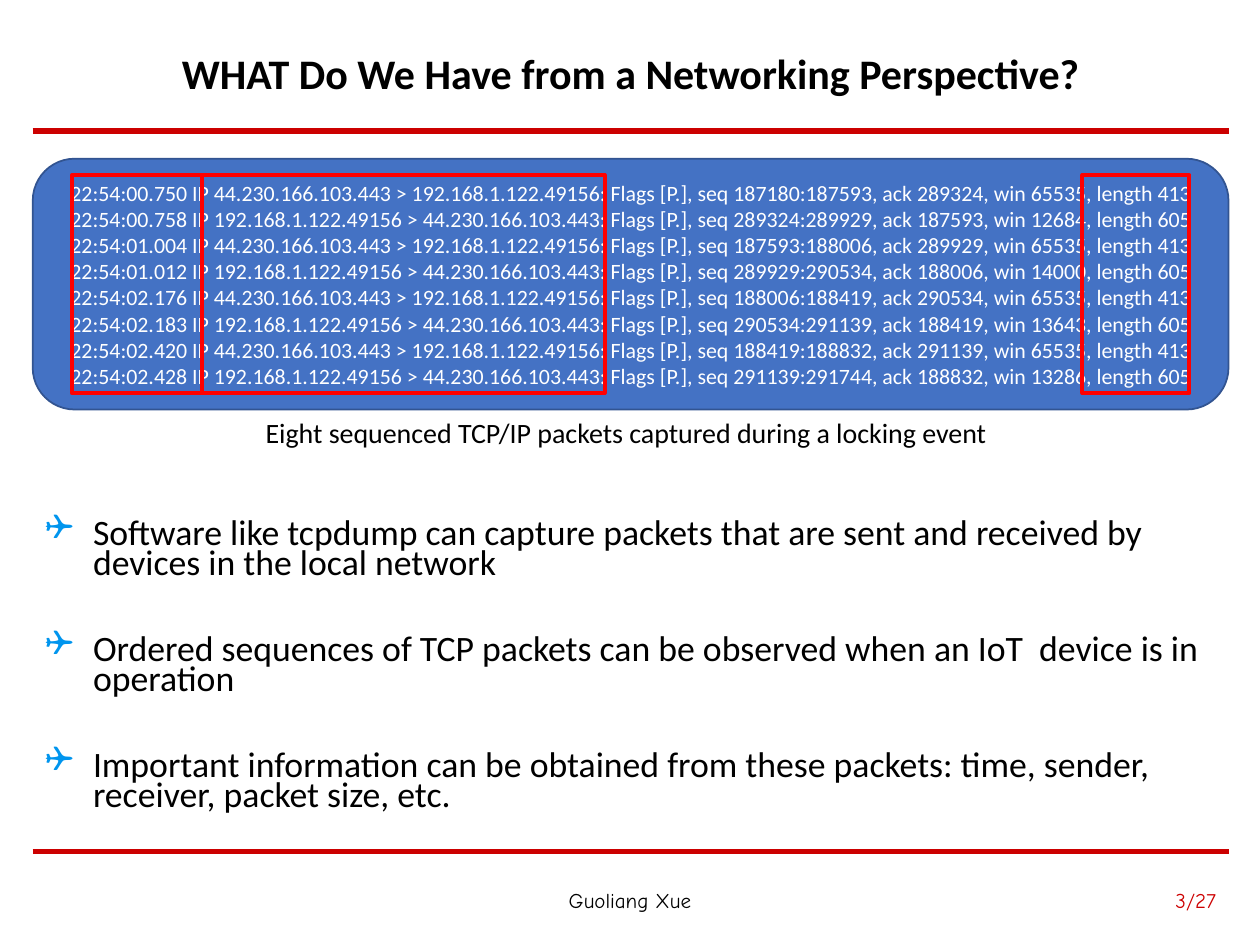
from pptx import Presentation
from pptx.dml.color import RGBColor
from pptx.enum.shapes import MSO_CONNECTOR, MSO_SHAPE
from pptx.enum.text import MSO_ANCHOR, PP_ALIGN
from pptx.oxml.ns import qn
from pptx.util import Inches, Pt
from lxml.etree import SubElement

COLORS = {
    "rule": "CC0000", "panel": "4472C4", "panel_line": "325491",
    "mark": "FF0000", "bullet": "0095EE", "page": "CD0000",
    "black": "000000", "white": "FFFFFF",
}
CLOUD, DEVICE = "44.230.166.103.443", "192.168.1.122.49156"
PACKETS = [
    ("00.750", 187180, 187593, 289324, 65535),
    ("00.758", 289324, 289929, 187593, 12684),
    ("01.004", 187593, 188006, 289929, 65535),
    ("01.012", 289929, 290534, 188006, 14000),
    ("02.176", 188006, 188419, 290534, 65535),
    ("02.183", 290534, 291139, 188419, 13643),
    ("02.420", 188419, 188832, 291139, 65535),
    ("02.428", 291139, 291744, 188832, 13286),
]
POINTS = [
    "Software like tcpdump can capture packets that are sent and received by devices in the local network",
    "Ordered sequences of TCP packets can be observed when an IoT  device is in operation",
    "Important information can be obtained from these packets: time, sender, receiver, packet size, etc.",
]


def rgb(name):
    return RGBColor.from_string(COLORS[name])


def add_bullet(p, indent):
    pPr = p._p.get_or_add_pPr()
    pPr.set("marL", str(indent))
    pPr.set("indent", str(-indent))
    clr = SubElement(pPr, qn("a:buClr"))
    SubElement(clr, qn("a:srgbClr"), val=COLORS["bullet"])
    SubElement(pPr, qn("a:buFont"), typeface="Wingdings")
    SubElement(pPr, qn("a:buChar"), char="❑")


def write(tf, lines, size, color="black", font="Calibri", bold=False,
          align=PP_ALIGN.LEFT, anchor=MSO_ANCHOR.TOP, wrap=True,
          spacing=None, gap=0, bullet=False):
    tf.word_wrap = wrap
    tf.vertical_anchor = anchor
    for i, line in enumerate(lines):
        p = tf.add_paragraph() if i else tf.paragraphs[0]
        if bullet:
            add_bullet(p, Inches(0.38))
        p.alignment = align
        if spacing:
            p.line_spacing = spacing
        if gap and i:
            p.space_before = Pt(gap)
        r = p.add_run()
        r.text = line
        r.font.size = Pt(size)
        r.font.name = font
        r.font.bold = bold
        r.font.color.rgb = rgb(color)


def add_text(s, box, lines, size, **fmt):
    sp = s.shapes.add_textbox(*map(Inches, box))
    write(sp.text_frame, lines, size, **fmt)


def add_box(s, kind, box, line, width, fill=None):
    sp = s.shapes.add_shape(kind, *map(Inches, box))
    sp.shadow.inherit = False
    if fill:
        sp.fill.solid()
        sp.fill.fore_color.rgb = rgb(fill)
    else:
        sp.fill.background()
    sp.line.color.rgb = rgb(line)
    sp.line.width = Pt(width)
    return sp


def add_rule(s, left, top, width):
    c = s.shapes.add_connector(MSO_CONNECTOR.STRAIGHT, Inches(left), Inches(top),
                               Inches(left + width), Inches(top))
    c.line.color.rgb = rgb("rule")
    c.line.width = Pt(3)
    SubElement(c._element.spPr, qn("a:effectLst"))


def packet_line(time, start, end, ack, win):
    length = end - start
    src, dst = (CLOUD, DEVICE) if length == 413 else (DEVICE, CLOUD)
    return (f"22:54:{time} IP {src} > {dst}: Flags [P.], "
            f"seq {start}:{end}, ack {ack}, win {win}, length {length}")


def add_header(s, left, top, width):
    add_text(s, (left, top, width, 0.65), ["WHAT Do We Have from a Networking Perspective?"],
             24, bold=True, align=PP_ALIGN.CENTER, anchor=MSO_ANCHOR.MIDDLE, spacing=0.9)
    add_rule(s, left, top + 0.76, width)


def add_capture(s, left, top, width, height):
    panel = add_box(s, MSO_SHAPE.ROUNDED_RECTANGLE, (left, top, width, height),
                    "panel_line", 1, "panel")
    write(panel.text_frame, [packet_line(*packet) for packet in PACKETS], 12.5,
          color="white", align=PP_ALIGN.CENTER, anchor=MSO_ANCHOR.MIDDLE)
    add_text(s, (left + 1.75, top + height, 5.99, 0.37),
             ["Eight sequenced TCP/IP packets captured during a locking event"], 16, wrap=False)
    for dx, w in [(0.31, 1.03), (1.34, 3.2), (8.33, 0.85)]:
        add_box(s, MSO_SHAPE.RECTANGLE, (left + dx, top + 0.13, w, height - 0.26), "mark", 2.25)


def add_points(s, box):
    add_text(s, box, POINTS, 20.4, spacing=0.7, gap=32, bullet=True)


def add_footer(s, left, top, width):
    add_rule(s, left, top, width)
    fmt = dict(font="Comic Neue", anchor=MSO_ANCHOR.MIDDLE)
    add_text(s, (left + 3.05, top + 0.14, 3.38, 0.48), ["Guoliang Xue"], 12,
             align=PP_ALIGN.CENTER, **fmt)
    add_text(s, (left + width - 2.95, top + 0.14, 2.95, 0.48), ["3/27"], 12,
             color="page", align=PP_ALIGN.RIGHT, **fmt)


def main():
    prs = Presentation()
    prs.slide_width, prs.slide_height = Inches(10), Inches(7.5)
    s = prs.slides.add_slide(prs.slide_layouts[6])
    left, width = 0.26, 9.49
    add_header(s, left, 0.28, width)
    add_capture(s, left, 1.26, width, 1.99)
    add_points(s, (left, 4.09, width, 2.67))
    add_footer(s, left, 6.76, width)
    prs.save("out.pptx")


if __name__ == "__main__":
    main()
